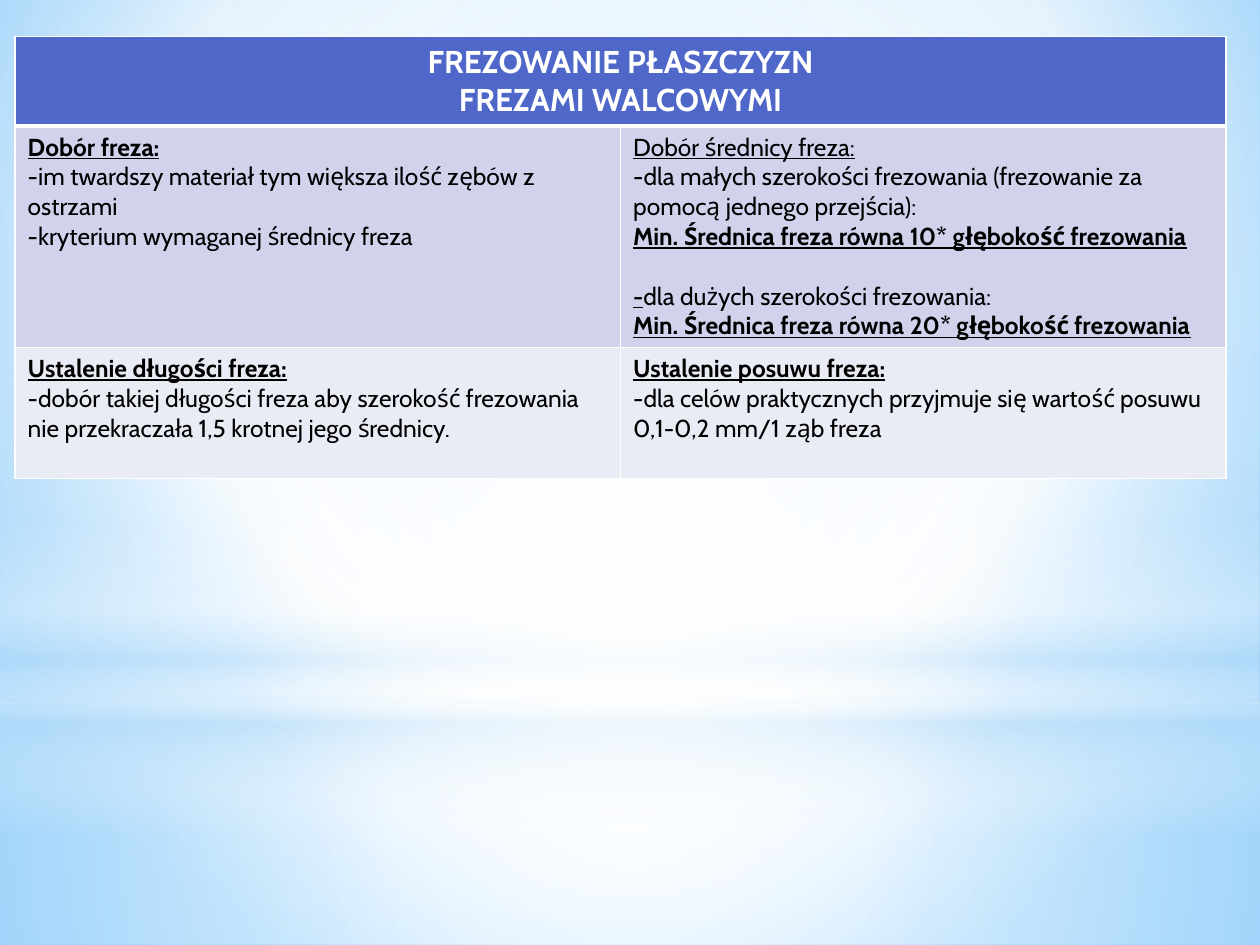
"""Build a slide with a table on milling planes with cylindrical cutters."""
import pptx
import pptx.util
import pptx.dml.color
import pptx.enum.shapes
import pptx.enum.text
import pptx.oxml
import pptx.oxml.ns
import lxml.etree

Inches, Pt = pptx.util.Inches, pptx.util.Pt
qn = pptx.oxml.ns.qn
SHAPE = pptx.enum.shapes.MSO_SHAPE
FONT = "Cabin"
COLORS = {
    "header": "4E67C8", "band": "D0D3EB", "light": "E9EBF5",
    "white": "FFFFFF", "black": "000000", "haze": "B4DCFA",
    "sky": "9ED5FF", "blue": "5BB9FF",
}

PLAIN, BOLD, UNDER, STRONG = (False, False), (True, False), (False, True), (True, True)
HEADER = [[("FREZOWANIE PŁASZCZYZN", BOLD)], [("FREZAMI WALCOWYMI", BOLD)]]
CUTTER = [
    [("Dobór freza:", STRONG)],
    [("-im twardszy materiał tym większa ilość zębów z ostrzami", PLAIN)],
    [("-kryterium wymaganej średnicy freza", PLAIN)],
]
DIAMETER = [
    [("Dobór średnicy freza:", UNDER)],
    [("-dla małych szerokości frezowania (frezowanie za pomocą jednego przejścia):", PLAIN)],
    [("Min. Średnica freza równa 10* głębokość frezowania", STRONG)],
    [("-", STRONG), ("dla dużych szerokości frezowania:", PLAIN)],
    [("Min. Średnica freza równa 20* głębokość frezowania", STRONG)],
]
LENGTH = [
    [("Ustalenie długości freza:", STRONG)],
    [("-dobór takiej długości freza aby szerokość frezowania nie przekraczała "
      "1,5 krotnej jego średnicy.", PLAIN)],
]
FEED = [
    [("Ustalenie posuwu freza:", STRONG)],
    [("-dla celów praktycznych przyjmuje się wartość posuwu 0,1-0,2 mm/1 ząb freza", PLAIN)],
]
ROWS = [
    (0.71, "header", [HEADER, []]),
    (1.75, "band", [CUTTER, DIAMETER]),
    (1.04, "light", [LENGTH, FEED]),
]

CENTER = (50, 50, 50, 50)
BACKGROUND = [(0, "sky", 100), (60, "white", 100), (100, "blue", 100)]
LAYERS = [
    (SHAPE.RECTANGLE, 5.58, 1.92, CENTER,
     [(0, "white", 91), (37, "white", 76), (100, "haze", 79)]),
    (SHAPE.RECTANGLE, 0, 5.58, CENTER,
     [(0, "white", 89), (48, "white", 62), (100, "haze", 79)]),
    (SHAPE.RECTANGLE, 4.12, 2.5, None,
     [(0, "white", 0), (29, "white", 30), (45, "haze", 40),
      (55, "white", 26), (65, "haze", 60), (100, "white", 0)]),
    (SHAPE.OVAL, 1.75, 5.58, CENTER, [(0, "white", 100), (56, "white", 0)]),
]


def add(parent, tag, **attrs):
    el = lxml.etree.SubElement(parent, qn(tag))
    for name, value in attrs.items():
        el.set(name, str(value))
    return el


def rgb(name):
    return pptx.dml.color.RGBColor.from_string(COLORS[name])


def set_gradient(fill, owner, stops, focus):
    fill.gradient()
    grad = owner.find(".//" + qn("a:gradFill"))
    grad.clear()
    grad.set("rotWithShape", "1")
    stop_list = add(grad, "a:gsLst")
    for pos, color, alpha in stops:
        stop = add(stop_list, "a:gs", pos=pos * 1000)
        clr = add(stop, "a:srgbClr", val=COLORS[color])
        if alpha < 100:
            add(clr, "a:alpha", val=alpha * 1000)
    if focus:
        shade = add(grad, "a:path", path="circle")
        add(shade, "a:fillToRect", **{side: v * 1000 for side, v in zip("ltrb", focus)})
    else:
        add(grad, "a:lin", ang=90 * 60000, scaled=0)


def set_borders(cell, bottom):
    tc_pr = cell._tc.get_or_add_tcPr()
    for i, (side, width) in enumerate(zip("LRTB", (1, 1, 1, bottom))):
        ln = add(tc_pr, "a:ln" + side, w=Pt(width))
        add(add(ln, "a:solidFill"), "a:srgbClr", val=COLORS["white"])
        tc_pr.insert(i, ln)


def write_cell(cell, paragraphs, size, color, centered):
    tf = cell.text_frame
    for i, runs in enumerate(paragraphs):
        p = tf.paragraphs[0] if i == 0 else tf.add_paragraph()
        if centered:
            p.alignment = pptx.enum.text.PP_ALIGN.CENTER
        if len(runs) > 1:
            p.space_before = Pt(17)
        for text, (bold, underline) in runs:
            r = p.add_run()
            r.text = text
            r.font.name, r.font.size = FONT, Pt(size)
            r.font.bold, r.font.underline = bold, underline
            r.font.color.rgb = rgb(color)


def main():
    prs = pptx.Presentation()
    prs.slide_width, prs.slide_height = Inches(10), Inches(7.5)
    s = prs.slides.add_slide(prs.slide_layouts[6])
    set_gradient(s.background.fill, s._element, BACKGROUND, (20, 10, 20, 60))
    for kind, top, height, focus, stops in LAYERS:
        sp = s.shapes.add_shape(kind, 0, Inches(top), prs.slide_width, Inches(height))
        sp.shadow.inherit = False
        sp.line.fill.background()
        set_gradient(sp.fill, sp._element, stops, focus)

    total = sum(height for height, _, _ in ROWS)
    table = s.shapes.add_table(len(ROWS), 2, Inches(0.12), Inches(0.29),
                               Inches(9.61), Inches(total)).table
    for i, (height, fill, cells) in enumerate(ROWS):
        is_header = i == 0
        table.rows[i].height = Inches(height)
        for j, paragraphs in enumerate(cells):
            cell = table.cell(i, j)
            cell.fill.solid()
            cell.fill.fore_color.rgb = rgb(fill)
            set_borders(cell, 3 if is_header else 1)
            write_cell(cell, paragraphs, 18 if is_header else 14,
                       "white" if is_header else "black", is_header)
    table.cell(0, 0).merge(table.cell(0, 1))
    prs.save("out.pptx")


if __name__ == "__main__":
    main()
